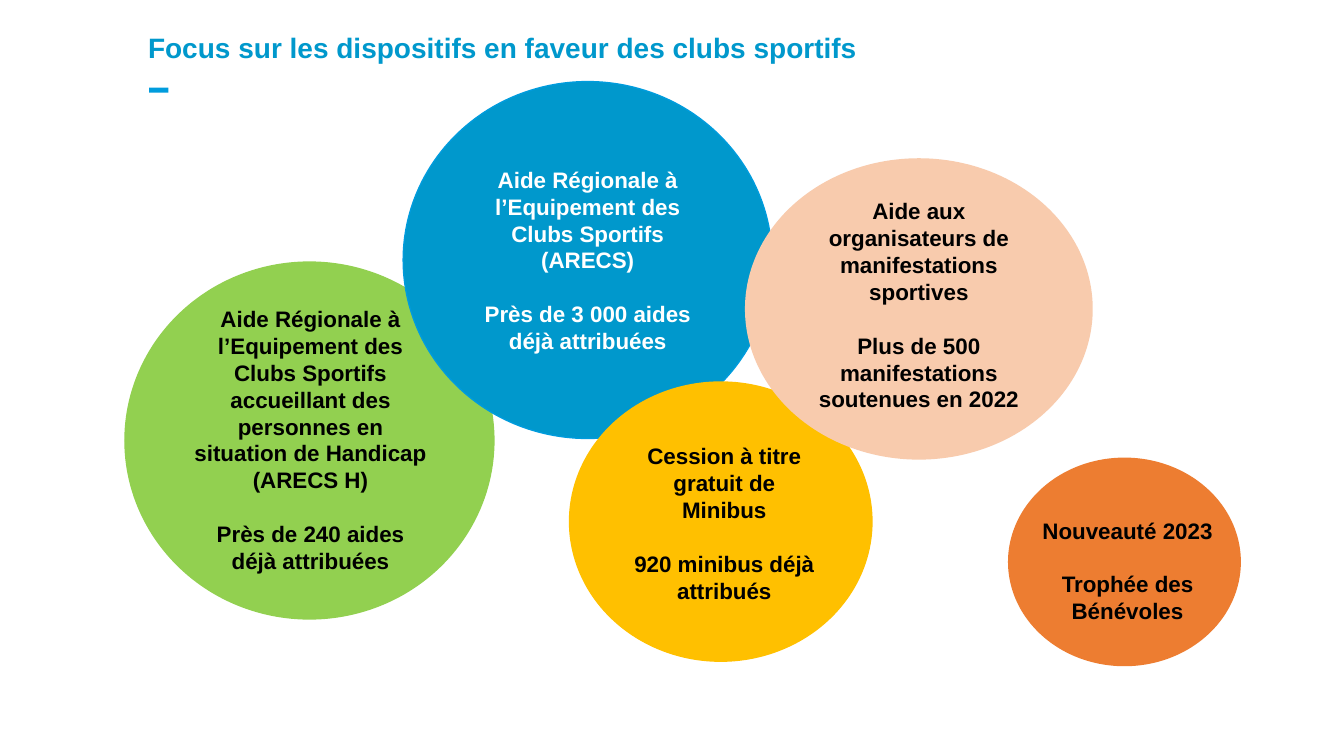
from pptx import Presentation, util as u
from pptx.dml.color import RGBColor
from pptx.enum import shapes, text

WIDE, HIGH = u.Inches(13.333), u.Inches(7.5)
BLUE, DASH, BLACK, WHITE = "0098CC", "009CDD", "000000", "FFFFFF"
BIG, MID = (27.45, 47.2), (15.53, 25.33)
WORDS = (18.9, 32.53)

BUBBLES = [
    ((9.3, 34.67, *BIG), "92D050", "92D050", (13.65, 41.87, *WORDS), BLACK,
     ["Aide Régionale à l’Equipement des Clubs Sportifs accueillant des "
      "personnes en situation de Handicap\n(ARECS H)",
      "Près de 240 aides déjà attribuées"]),
    ((30, 10.8, *BIG), BLUE, DASH, (34.28, 18.13, *WORDS), WHITE,
     ["Aide Régionale à l’Equipement des Clubs Sportifs (ARECS)",
      "Près de 3 000 aides déjà attribuées"]),
    ((42.38, 50.53, 22.5, 36.93), "FFC000", "FFC000", (46.13, 56.53, *MID), BLACK,
     ["Cession à titre gratuit de Minibus",
      "920 minibus déjà attribués"]),
    ((55.43, 20.93, 25.88, 39.87), "F8CBAD", None, (59.78, 26.4, 17.18, 27.87), BLACK,
     ["Aide aux organisateurs de manifestations sportives",
      "Plus de 500 manifestations soutenues en 2022"]),
    ((75, 60.53, 17.33, 27.6), "ED7D31", None, (76.13, 62.8, *MID), BLACK,
     ["Nouveauté 2023", "Trophée des Bénévoles"]),
]


def paint(target, hue):
    target.rgb = RGBColor.from_string(hue)


def place(area):
    return [int(part * side / 100) for part, side in zip(area, (WIDE, HIGH) * 2)]


def add_form(slide, kind, area, fill, edge=None):
    form = slide.shapes.add_shape(kind, *place(area))
    form.shadow.inherit = False
    form.fill.solid()
    paint(form.fill.fore_color, fill)
    if edge:
        paint(form.line.color, edge)
        form.line.width = u.Pt(1)
    else:
        form.line.fill.background()


def add_words(slide, area, parts, hue, size, pitch, align):
    frame = slide.shapes.add_textbox(*place(area)).text_frame
    frame.word_wrap = True
    frame.vertical_anchor = text.MSO_ANCHOR.MIDDLE
    for rank, part in enumerate(parts):
        para = frame.add_paragraph() if rank else frame.paragraphs[0]
        para.alignment = align
        para.line_spacing = u.Pt(pitch)
        if rank:
            para.space_before = u.Pt(pitch)
        for row, line in enumerate(part.split("\n")):
            if row:
                para.add_line_break()
            run = para.add_run()
            run.text = line
            run.font.name = "Arial"
            run.font.size = u.Pt(size)
            run.font.bold = True
            paint(run.font.color, hue)


def main():
    deck = Presentation()
    deck.slide_width, deck.slide_height = WIDE, HIGH
    slide = deck.slides.add_slide(deck.slide_layouts[6])
    add_form(slide, shapes.MSO_SHAPE.RECTANGLE, (11.1, 11.6, 1.43, 0.67), DASH)
    add_words(slide, (10.28, 3.47, 84.08, 6),
              ["Focus sur les dispositifs en faveur des clubs sportifs"],
              BLUE, 20, 22, text.PP_ALIGN.LEFT)
    for area, fill, edge, box, hue, parts in BUBBLES:
        add_form(slide, shapes.MSO_SHAPE.FLOWCHART_CONNECTOR, area, fill, edge)
        add_words(slide, box, parts, hue, 16, 19.2, text.PP_ALIGN.CENTER)
    deck.save("out.pptx")


if __name__ == "__main__":
    main()
